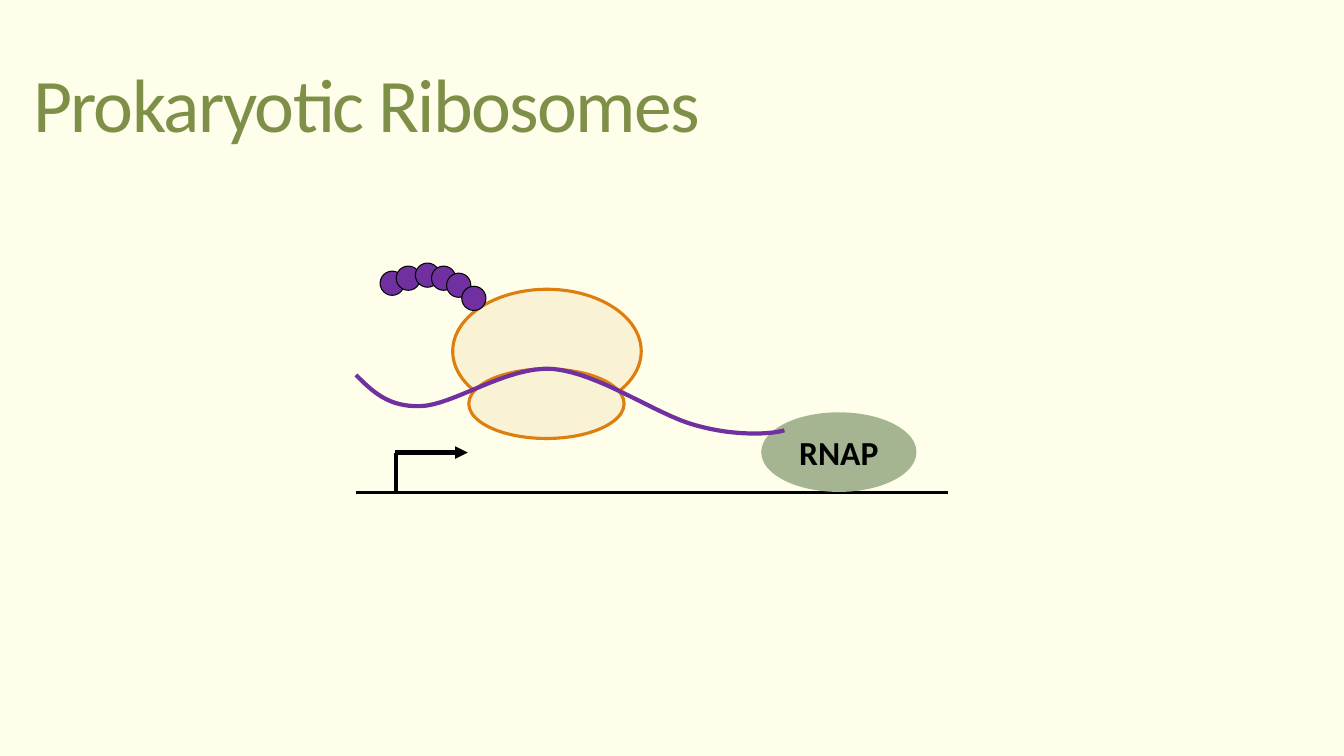
from lxml.etree import SubElement
from pptx import Presentation
from pptx.dml.color import RGBColor
from pptx.enum.shapes import MSO_CONNECTOR, MSO_SHAPE
from pptx.enum.text import MSO_ANCHOR, PP_ALIGN
from pptx.oxml.ns import qn
from pptx.util import Inches, Pt

CREAM = RGBColor(0xFF, 0xFE, 0xEB)
OLIVE = RGBColor(0x7E, 0x8F, 0x47)
SAND = RGBColor(0xFA, 0xF2, 0xD4)
ORANGE = RGBColor(0xDD, 0x7E, 0x0E)
PURPLE = RGBColor(0x70, 0x30, 0xA0)
SAGE = RGBColor(0xA5, 0xB5, 0x92)
BLACK = RGBColor(0, 0, 0)

BEAD_SIZE = 0.24
BEADS = [(3.77, 2.69), (3.93, 2.64), (4.12, 2.61),
         (4.28, 2.64), (4.43, 2.71), (4.58, 2.84)]
MRNA_START = (3.53, 3.72)
MRNA_CURVES = [
    ((3.69, 3.88), (3.85, 4.04), (4.17, 4.03)),
    ((4.5, 4.02), (5.03, 3.63), (5.48, 3.66)),
    ((5.94, 3.7), (6.52, 4.12), (6.9, 4.22)),
    ((7.29, 4.33), (7.64, 4.31), (7.78, 4.27)),
]
CURVE_STEPS = 16


def bezier_point(start, control1, control2, end, t):
    u = 1 - t
    return tuple(u**3 * a + 3 * u**2 * t * b + 3 * u * t**2 * c + t**3 * d
                 for a, b, c, d in zip(start, control1, control2, end))


class SlideBuilder:
    font = "Calibri"

    def __init__(self, slide):
        self.slide = slide
        slide.background.fill.solid()
        slide.background.fill.fore_color.rgb = CREAM
        self.diagram = slide.shapes.add_group_shape().shapes

    def text_run(self, paragraph, wording, size, color, bold=False):
        run = paragraph.add_run()
        run.text = wording
        run.font.name = self.font
        run.font.size = Pt(size)
        run.font.bold = bold
        run.font.color.rgb = color
        return run

    def title(self, wording, left, top, width, height):
        heading = self.slide.shapes.add_textbox(
            Inches(left), Inches(top), Inches(width), Inches(height))
        frame = heading.text_frame
        frame.word_wrap = True
        frame.vertical_anchor = MSO_ANCHOR.MIDDLE
        paragraph = frame.paragraphs[0]
        paragraph.line_spacing = 0.85
        run = self.text_run(paragraph, wording, 54, OLIVE)
        run.font._element.set("spc", "-120")

    def ellipse(self, left, top, width, height, fill, line=None, weight=0):
        oval = self.diagram.add_shape(
            MSO_SHAPE.OVAL, Inches(left), Inches(top), Inches(width), Inches(height))
        oval.shadow.inherit = False
        oval.fill.solid()
        oval.fill.fore_color.rgb = fill
        if line is None:
            oval.line.fill.background()
        else:
            oval.line.color.rgb = line
            oval.line.width = Pt(weight)
        return oval

    def label(self, shape, wording, size):
        frame = shape.text_frame
        frame.word_wrap = False
        frame.vertical_anchor = MSO_ANCHOR.MIDDLE
        frame.paragraphs[0].alignment = PP_ALIGN.CENTER
        self.text_run(frame.paragraphs[0], wording, size, BLACK, bold=True)

    def line(self, start, end, weight, arrow=False):
        connector = self.diagram.add_connector(
            MSO_CONNECTOR.STRAIGHT, *(Inches(v) for v in start + end))
        connector.line.color.rgb = BLACK
        connector.line.width = Pt(weight)
        if arrow:
            SubElement(connector.line._get_or_add_ln(), qn("a:tailEnd"), type="triangle")
        SubElement(connector._element.spPr, qn("a:effectLst"))

    def curve(self, start, segments, color, weight):
        points = []
        origin = start
        for control1, control2, end in segments:
            points += [bezier_point(origin, control1, control2, end, step / CURVE_STEPS)
                       for step in range(1, CURVE_STEPS + 1)]
            origin = end
        builder = self.diagram.build_freeform(Inches(start[0]), Inches(start[1]))
        builder.add_line_segments([(Inches(x), Inches(y)) for x, y in points], close=False)
        strand = builder.convert_to_shape()
        strand.shadow.inherit = False
        strand.fill.background()
        strand.line.color.rgb = color
        strand.line.width = Pt(weight)


def main():
    deck = Presentation()
    deck.slide_width = Inches(13.33)
    deck.slide_height = Inches(7.5)
    page = SlideBuilder(deck.slides.add_slide(deck.slide_layouts[6]))

    page.title("Prokaryotic Ribosomes", 0.23, 0.18, 11.78, 1.81)

    page.ellipse(4.49, 2.87, 1.87, 1.23, SAND, ORANGE, 2.25)
    page.ellipse(4.65, 3.66, 1.54, 0.69, SAND, ORANGE, 2.25)
    for left, top in BEADS:
        page.ellipse(left, top, BEAD_SIZE, BEAD_SIZE, PURPLE, BLACK, 0.75)

    page.line((3.53, 4.89), (9.4, 4.89), 2.25)
    polymerase = page.ellipse(7.55, 4.09, 1.54, 0.79, SAGE)
    page.label(polymerase, "RNAP", 24)
    page.curve(MRNA_START, MRNA_CURVES, PURPLE, 3)

    page.line((3.93, 4.49), (3.93, 4.89), 3)
    page.line((3.92, 4.49), (4.64, 4.49), 3, arrow=True)

    deck.save("out.pptx")


if __name__ == "__main__":
    main()
